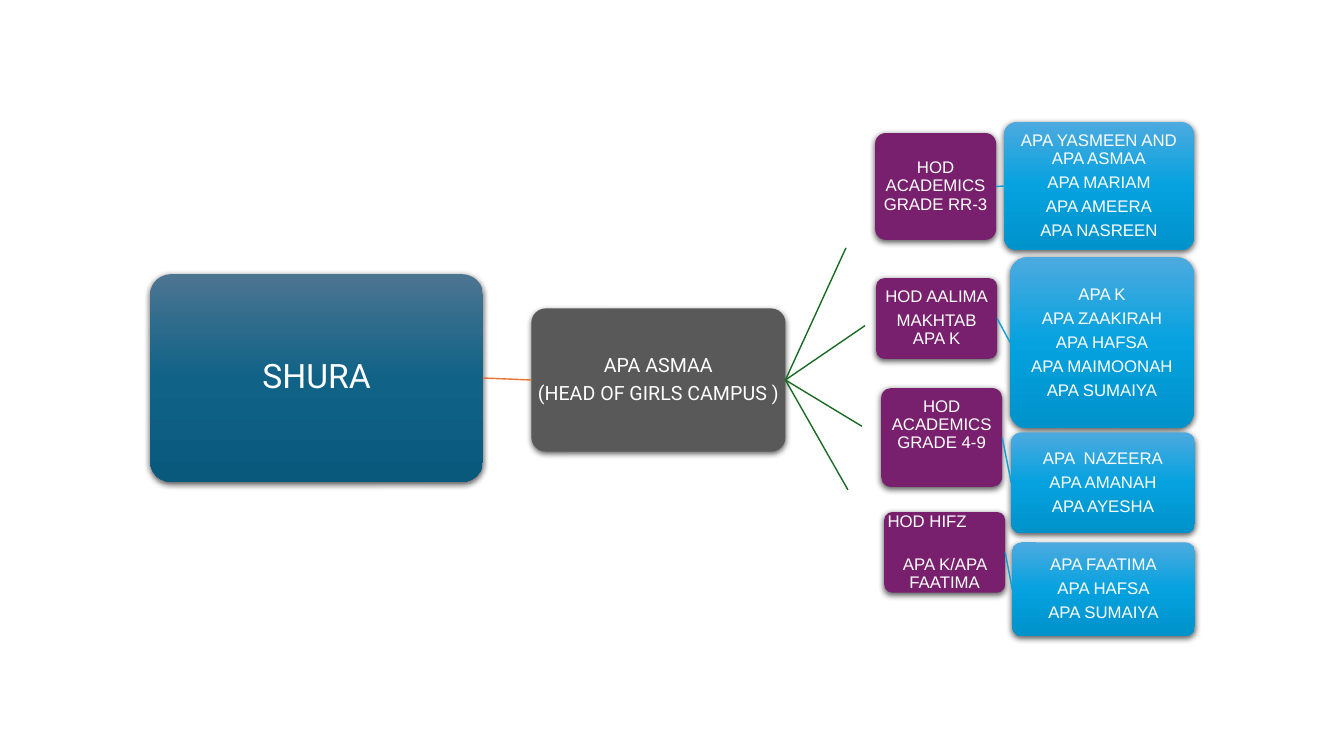
from copy import deepcopy

from lxml import etree
from pptx import Presentation
from pptx import util as u
from pptx.dml.color import RGBColor
from pptx.enum import shapes, text
from pptx.oxml import ns

NAVY = ("4C7591", "106287", "09597D")
SKY = ("4CAADF", "05A2DF", "0092CB")
GREY, PURPLE, WHITE = "595959", "78206E", "FFFFFF"
ORANGE, GREEN, BLUE = "E97132", "196B24", "0F9ED5"
RIGHT_SITE, LEFT_SITE = 3, 1

BRANCHES = [
    dict(top=0, hod=(0.29, 0.11, 1.06), staff=(1.57, 0, 1.88, 1.27), tip=(0, 1.25),
         duties=["HOD ACADEMICS GRADE RR-3"],
         team=["APA YASMEEN AND APA ASMAA", "APA MARIAM", "APA AMEERA", "APA NASREEN"]),
    dict(top=1.34, hod=(0.3, 0.21, 0.8), staff=(1.63, 0, 1.82, 1.7), tip=(0.19, 0.68),
         duties=["HOD AALIMA", "MAKHTAB\vAPA K"],
         team=["APA K", "APA ZAAKIRAH", "APA HAFSA", "APA MAIMOONAH", "APA SUMAIYA"]),
    dict(top=2.64, hod=(0.35, 0, 0.98), staff=(1.64, 0.44, 1.82, 1), tip=(0.16, 0.38),
         duties=["HOD ACADEMICS GRADE 4-9"], duties_format=dict(bottom=0.25),
         team=["APA  NAZEERA", "APA AMANAH", "APA AYESHA"]),
    dict(top=3.87, hod=(0.38, 0, 0.8), staff=(1.65, 0.3, 1.81, 0.93), tip=(0.02, -0.22),
         duties=["HOD HIFZ", "APA K/APA FAATIMA"],
         duties_format=dict(first_left=True, first_gap=17.8),
         team=["APA FAATIMA", "APA HAFSA", "APA SUMAIYA"]),
]


def rgb(value):
    return RGBColor.from_string(value)


def write(frame, lines, size=12, font="Arial", inset=0.01, bottom=None,
          first_left=False, first_gap=None):
    frame.word_wrap = True
    frame.vertical_anchor = text.MSO_ANCHOR.MIDDLE
    frame.margin_left = frame.margin_right = frame.margin_top = u.Inches(inset)
    frame.margin_bottom = u.Inches(bottom or inset)
    for index, line in enumerate(lines):
        paragraph = frame.add_paragraph() if index else frame.paragraphs[0]
        paragraph.text = line
        paragraph.alignment = text.PP_ALIGN.CENTER
        paragraph.line_spacing = 0.9
        paragraph.space_after = u.Pt(0.35 * size)
        paragraph.font.size = u.Pt(size)
        paragraph.font.name = font
        paragraph.font.color.rgb = rgb(WHITE)
    opening = frame.paragraphs[0]
    if first_left:
        opening.alignment = text.PP_ALIGN.LEFT
    if first_gap:
        opening.space_after = u.Pt(first_gap)


def paint_gradient(fill, colours):
    fill.gradient()
    fill.gradient_angle = 270
    stops = fill.gradient_stops
    last = stops[1]._gs
    last.addprevious(deepcopy(last))
    for index, (stop, colour) in enumerate(zip(fill.gradient_stops, colours)):
        stop.position = index / 2
        stop.color.rgb = rgb(colour)


def cast_shadow(card):
    card.shadow.inherit = False
    effects = card._element.spPr.find(ns.qn("a:effectLst"))
    shadow = etree.SubElement(effects, ns.qn("a:outerShdw"), blurRad="57150",
                              dist="19050", dir="5400000", algn="ctr", rotWithShape="0")
    black = etree.SubElement(shadow, ns.qn("a:srgbClr"), val="000000")
    etree.SubElement(black, ns.qn("a:alpha"), val="63000")


def add_card(slide, box, paint, lines, **text_format):
    card = slide.shapes.add_shape(shapes.MSO_SHAPE.ROUNDED_RECTANGLE,
                                  *(u.Inches(length) for length in box))
    card.adjustments[0] = 0.1
    card.line.fill.background()
    if isinstance(paint, tuple):
        paint_gradient(card.fill, paint)
    else:
        card.fill.solid()
        card.fill.fore_color.rgb = rgb(paint)
    cast_shadow(card)
    write(card.text_frame, lines, **text_format)
    return card


def add_link(slide, source, colour, target=None, tip=(0, 0)):
    link = slide.shapes.add_connector(shapes.MSO_CONNECTOR.STRAIGHT, 0, 0,
                                      *(u.Inches(length) for length in tip))
    link.begin_connect(source, RIGHT_SITE)
    if target is not None:
        link.end_connect(target, LEFT_SITE)
    link.line.color.rgb = rgb(colour)
    link.line.width = u.Pt(1)
    etree.SubElement(link._element.spPr, ns.qn("a:effectLst"))


def add_leadership(slide, box):
    left, top, width, height = box
    shura = add_card(slide, (left, top, 3.3, height), NAVY, ["SHURA"],
                     size=24, font="Roboto", inset=0.02)
    head_width, head_height = 2.52, 1.42
    head = add_card(slide, (left + width - head_width, top + 0.34, head_width, head_height),
                    GREY, ["APA ASMAA", "(HEAD OF GIRLS CAMPUS )"], size=14, font="Roboto")
    add_link(slide, shura, ORANGE, target=head)
    return head


def add_branch(slide, origin, head, top, hod, staff, tip, duties, team, duties_format=None):
    left, upper = origin[0], origin[1] + top
    hod_left, hod_top, hod_height = hod
    staff_left, staff_top, *staff_size = staff
    add_link(slide, head, GREEN, tip=(left + tip[0], upper + tip[1]))
    hod_card = add_card(slide, (left + hod_left, upper + hod_top, 1.2, hod_height),
                        PURPLE, duties, **(duties_format or {}))
    staff_card = add_card(slide, (left + staff_left, upper + staff_top, *staff_size), SKY, team)
    add_link(slide, hod_card, BLUE, target=staff_card)


def main():
    deck = Presentation()
    deck.slide_width, deck.slide_height = u.Inches(13.33), u.Inches(7.5)
    slide = deck.slides.add_slide(deck.slide_layouts[6])
    head = add_leadership(slide, (1.49, 2.72, 6.3, 2.06))
    for branch in BRANCHES:
        add_branch(slide, (8.39, 1.21), head, **branch)
    deck.save("out.pptx")


if __name__ == "__main__":
    main()
